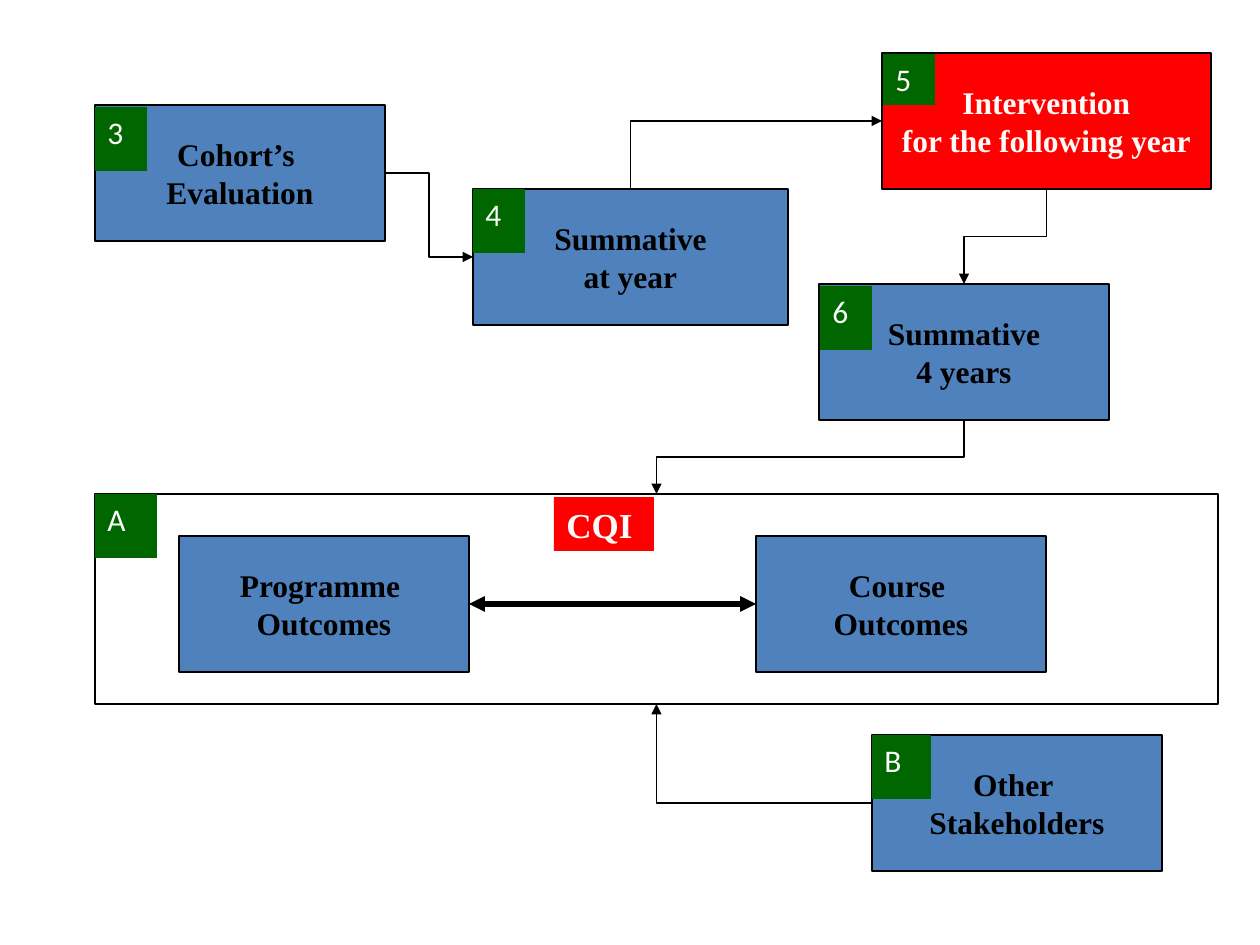
from dataclasses import dataclass

from lxml import etree
from pptx import Presentation
from pptx.dml.color import RGBColor
from pptx.enum.shapes import MSO_CONNECTOR, MSO_SHAPE
from pptx.enum.text import MSO_ANCHOR, MSO_AUTO_SIZE, PP_ALIGN
from pptx.oxml.ns import qn
from pptx.util import Pt

RECTANGLE = MSO_SHAPE.RECTANGLE
ELBOW = MSO_CONNECTOR.ELBOW
STRAIGHT = MSO_CONNECTOR.STRAIGHT
CENTER = PP_ALIGN.CENTER
LEFT_ALIGNED = PP_ALIGN.LEFT
MIDDLE = MSO_ANCHOR.MIDDLE
UPPER = MSO_ANCHOR.TOP
GROW = MSO_AUTO_SIZE.SHAPE_TO_FIT_TEXT

PIXELS_PER_INCH = 126
TOP, LEFT, BOTTOM, RIGHT = range(4)
BLUE, RED, GREEN = "4F81BD", "FF0000", "006600"
BLACK, OFF_WHITE = "000000", "FCFBF9"
SERIF, SANS = "Times New Roman", "Calibri"
BOX_HEIGHT = 136


@dataclass(frozen=True)
class Box:
    name: str
    text: str
    left: int
    top: int
    width: int = 290
    height: int = BOX_HEIGHT
    fill: str | None = BLUE
    color: str = BLACK


@dataclass(frozen=True)
class Label:
    text: str
    left: int
    top: int
    width: int = 52
    height: int = 64
    fill: str = GREEN
    font: str = SANS
    size: int = 18
    bold: bool = False


@dataclass(frozen=True)
class Link:
    start: str
    start_side: int
    end: str
    end_side: int
    preset: str = "bentConnector3"
    turn: int = 0
    weight: float = 0.75
    both_heads: bool = False


BOXES = [
    Box("stakeholders", "Other \nStakeholders", 872, 735),
    Box("intervention", "Intervention\nfor the following year", 882, 53, 329,
        fill=RED, color=OFF_WHITE),
    Box("four years", "Summative\n4 years", 819, 284),
    Box("at year", "Summative\nat year", 473, 189, 315),
    Box("cohort", "Cohort’s \nEvaluation", 95, 105),
    Box("course", "Course \nOutcomes", 756, 536),
    Box("programme", "Programme \nOutcomes", 179, 536),
    Box("improvement", "", 95, 494, 1123, 210, fill=None),
]

LINKS = [
    Link("cohort", RIGHT, "at year", LEFT),
    Link("intervention", BOTTOM, "four years", TOP, turn=90),
    Link("programme", RIGHT, "course", LEFT, "line", weight=3, both_heads=True),
    Link("four years", BOTTOM, "improvement", TOP, turn=90),
    Link("at year", TOP, "intervention", LEFT, "bentConnector2", turn=90),
    Link("stakeholders", LEFT, "improvement", BOTTOM, "bentConnector2", turn=180),
]

LABELS = [
    Label("CQI", 554, 497, 100, 54, RED, SERIF, 20, True),
    Label("A", 95, 494, 62),
    Label("3", 95, 107),
    Label("4", 473, 189),
    Label("5", 883, 54, height=51),
    Label("6", 820, 286),
    Label("B", 872, 735, 59),
]


def emu(pixels: int) -> int:
    return round(pixels * 914400 / PIXELS_PER_INCH)


def rgb(value: str) -> RGBColor:
    return RGBColor.from_string(value)


def write(shape, text: str, *, font: str, size: int, color: str, bold: bool,
          align, anchor, wrap: bool) -> None:
    frame = shape.text_frame
    frame.word_wrap = wrap
    frame.vertical_anchor = anchor
    for index, line in enumerate(text.split("\n")):
        para = frame.add_paragraph() if index else frame.paragraphs[0]
        para.alignment = align
        span = para.add_run()
        span.text = line
        span.font.name = font
        span.font.size = Pt(size)
        span.font.bold = bold
        span.font.color.rgb = rgb(color)


def add_rectangle(page, item: Box | Label):
    shape = page.shapes.add_shape(
        RECTANGLE, emu(item.left), emu(item.top), emu(item.width), emu(item.height))
    shape.shadow.inherit = False
    if item.fill:
        shape.fill.solid()
        shape.fill.fore_color.rgb = rgb(item.fill)
    else:
        shape.fill.background()
    return shape


def draw_box(page, box: Box):
    shape = add_rectangle(page, box)
    shape.line.color.rgb = rgb(BLACK)
    shape.line.width = Pt(0.75)
    if box.text:
        write(shape, box.text, font=SERIF, size=18, color=box.color, bold=True,
              align=CENTER, anchor=MIDDLE, wrap=False)
    return shape


def draw_label(page, label: Label) -> None:
    shape = add_rectangle(page, label)
    shape.line.fill.background()
    write(shape, label.text, font=label.font, size=label.size, color=OFF_WHITE,
          bold=label.bold, align=LEFT_ALIGNED, anchor=UPPER, wrap=True)
    shape.text_frame.auto_size = GROW


def turn_connector(connector, turn: int) -> None:
    across = connector.end_x - connector.begin_x
    down = connector.end_y - connector.begin_y
    middle_x = (connector.begin_x + connector.end_x) // 2
    middle_y = (connector.begin_y + connector.end_y) // 2
    run, rise = {90: (down, -across), 180: (-across, -down)}[turn]
    connector.width, connector.height = abs(run), abs(rise)
    connector.left = middle_x - abs(run) // 2
    connector.top = middle_y - abs(rise) // 2
    transform = connector._element.spPr.find(qn("a:xfrm"))
    transform.set("rot", str(turn * 60000))
    transform.set("flipH", str(int(run < 0)))
    transform.set("flipV", str(int(rise < 0)))


def draw_link(page, link: Link, shapes: dict) -> None:
    kind = STRAIGHT if link.preset == "line" else ELBOW
    connector = page.shapes.add_connector(kind, 0, 0, 0, 0)
    connector.begin_connect(shapes[link.start], link.start_side)
    connector.end_connect(shapes[link.end], link.end_side)
    if link.turn:
        turn_connector(connector, link.turn)
    connector.line.color.rgb = rgb(BLACK)
    connector.line.width = Pt(link.weight)
    properties = connector._element.spPr
    properties.find(qn("a:prstGeom")).set("prst", link.preset)
    outline = properties.find(qn("a:ln"))
    for end in ("headEnd", "tailEnd") if link.both_heads else ("tailEnd",):
        etree.SubElement(outline, qn(f"a:{end}")).set("type", "triangle")
    etree.SubElement(properties, qn("a:effectLst"))


def main() -> None:
    deck = Presentation()
    deck.slide_width, deck.slide_height = emu(1260), emu(945)
    page = deck.slides.add_slide(deck.slide_layouts.get_by_name("Blank"))
    shapes = {box.name: draw_box(page, box) for box in BOXES}
    for link in LINKS:
        draw_link(page, link, shapes)
    for label in LABELS:
        draw_label(page, label)
    deck.save("out.pptx")


if __name__ == "__main__":
    main()
